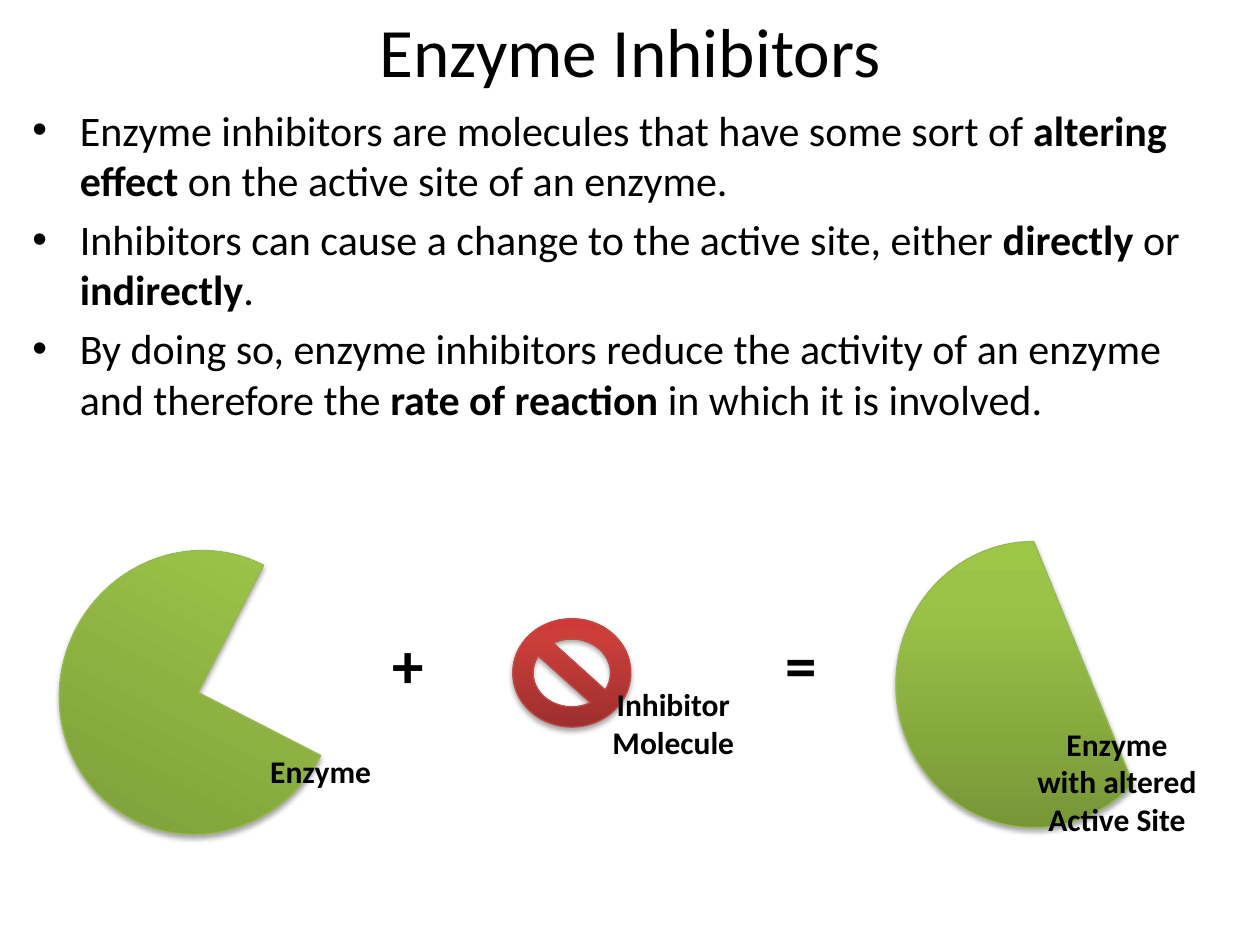
from lxml import etree
from pptx import Presentation
from pptx import util as u
from pptx.dml.color import RGBColor
from pptx.enum import shapes, text
from pptx.oxml.ns import qn

GREEN = [(0, "779737"), (80, "9BC348"), (100, "9DC746")]
RED = [(0, "9C2F2D"), (80, "CB3E3A"), (100, "CE3B37")]
INDENT = 27


def color(hex_value):
    return RGBColor.from_string(hex_value)


def child(parent, tag, **attributes):
    return etree.SubElement(parent, qn(tag), {k: str(v) for k, v in attributes.items()})


def add_text(slide, box, paragraphs, size=18, bold=False, align="CENTER",
             anchor="TOP", bullets=False):
    frame = slide.shapes.add_textbox(*map(u.Pt, box)).text_frame
    frame.word_wrap = True
    frame.vertical_anchor = getattr(text.MSO_ANCHOR, anchor)
    for number, pieces in enumerate(paragraphs):
        line = frame.paragraphs[0] if number == 0 else frame.add_paragraph()
        line.alignment = getattr(text.PP_ALIGN, align)
        if bullets:
            add_bullet(line, size)
        for index, piece in enumerate(pieces):
            run = line.add_run()
            run.text = piece
            run.font.name = "Calibri"
            run.font.size = u.Pt(size)
            run.font.bold = bold or index % 2 == 1
            run.font.color.rgb = color("000000")


def add_bullet(line, size):
    line.space_before = u.Pt(size * 0.2)
    properties = line._p.get_or_add_pPr()
    properties.set("marL", str(u.Pt(INDENT)))
    properties.set("indent", str(-u.Pt(INDENT)))
    child(properties, "a:buFont", typeface="Arial")
    child(properties, "a:buChar", char="•")


def add_molecule(slide, kind, box, stops, outline, rotation=0):
    molecule = slide.shapes.add_shape(kind, *map(u.Pt, box))
    molecule.rotation = rotation
    molecule.line.color.rgb = color(outline)
    molecule.line.width = u.Pt(0.75)
    molecule.fill.gradient()
    molecule.fill.gradient_angle = 90
    properties = molecule._element.spPr
    stop_list = properties.find(qn("a:gradFill")).find(qn("a:gsLst"))
    for old_stop in list(stop_list):
        stop_list.remove(old_stop)
    for position, hex_value in stops:
        stop = child(stop_list, "a:gs", pos=position * 1000)
        child(stop, "a:srgbClr", val=hex_value)
    molecule.shadow.inherit = False
    shadow = child(properties.find(qn("a:effectLst")), "a:outerShdw",
                   blurRad=u.Pt(3.1), dist=u.Pt(1.8), dir=90 * 60000, rotWithShape=0)
    shade = child(shadow, "a:srgbClr", val="000000")
    child(shade, "a:alpha", val=35000)


def main():
    deck = Presentation()
    deck.slide_width, deck.slide_height = u.Pt(720), u.Pt(540)
    slide = deck.slides.add_slide(deck.slide_layouts[6])

    add_text(slide, (36, 11.5, 648, 34), [["Enzyme Inhibitors"]], size=39.6, anchor="MIDDLE")
    explanation = [
        ["Enzyme inhibitors are molecules that have some sort of ", "altering effect",
         " on the active site of an enzyme."],
        ["Inhibitors can cause a change to the active site, either ", "directly", " or ",
         "indirectly", "."],
        ["By doing so, enzyme inhibitors reduce the activity of an enzyme and therefore the ",
         "rate of reaction", " in which it is involved."],
    ]
    add_text(slide, (11.5, 56, 698, 472), explanation, size=24, align="LEFT", bullets=True)

    kinds = shapes.MSO_SHAPE
    add_molecule(slide, kinds.PIE, (34.5, 314, 157.5, 163.5), GREEN, "98B955", rotation=27.2)
    add_text(slide, (113, 426, 140.5, 29), [["Enzyme"]], bold=True)
    add_molecule(slide, kinds.NO_SYMBOL, (293, 353.5, 67.5, 62), RED, "BF4C48")
    add_text(slide, (314.5, 388, 140.5, 51), [["Inhibitor"], ["Molecule"]], bold=True)
    add_molecule(slide, kinds.CHORD, (512, 309.5, 157.5, 163.5), GREEN, "98B955")
    add_text(slide, (568, 410.5, 140.5, 73), [["Enzyme"], ["with altered Active Site"]], bold=True)
    for sign, left in (("+", 191.5), ("=", 416)):
        add_text(slide, (left, 354, 84, 51), [[sign]], size=36, bold=True)

    deck.save("out.pptx")


if __name__ == "__main__":
    main()
